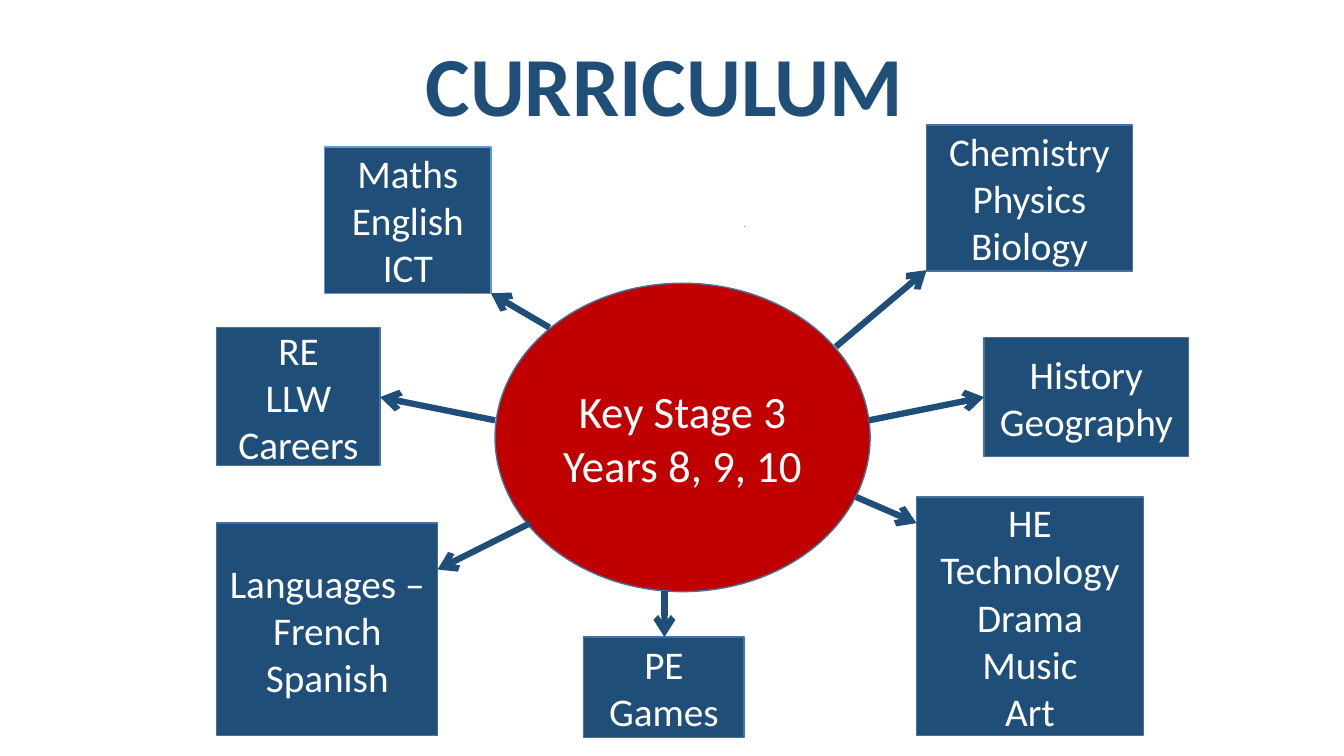
import pptx
import pptx.util
import pptx.dml.color
import pptx.enum.shapes
import pptx.enum.text
import pptx.oxml.ns
import lxml.etree

Inches = pptx.util.Inches
Pt = pptx.util.Pt
SHAPE = pptx.enum.shapes.MSO_SHAPE
NAVY, RED, WHITE = "1F4E79", "C00000", "FFFFFF"
EDGE, SKY = "43739E", "5B9BD5"


def color(code):
    return pptx.dml.color.RGBColor.from_string(code)


class Chart:
    """Style and current slide of the curriculum map."""

    font = "Calibri"

    def __init__(self, slide):
        self.slide = slide

    def label(self, frame, lines, size, ink, bold=False, space=None):
        frame.word_wrap = True
        frame.vertical_anchor = pptx.enum.text.MSO_ANCHOR.MIDDLE
        for i, line in enumerate(lines):
            para = frame.add_paragraph() if i else frame.paragraphs[0]
            para.alignment = pptx.enum.text.PP_ALIGN.CENTER
            if space:
                para.line_spacing = space
            run = para.add_run()
            run.text = line
            run.font.name = self.font
            run.font.size = Pt(size)
            run.font.bold = bold
            run.font.color.rgb = color(ink)

    def title(self, text, spot):
        head = self.slide.shapes.title
        head.left, head.top, head.width, head.height = map(Inches, spot)
        self.label(head.text_frame, [text], 60, NAVY, True, 0.9)

    def node(self, kind, spot, lines, fill=NAVY, edge=EDGE, size=28):
        node = self.slide.shapes.add_shape(kind, *map(Inches, spot))
        node.shadow.inherit = False
        node.fill.solid()
        node.fill.fore_color.rgb = color(fill)
        node.line.color.rgb = color(edge)
        node.line.width = Pt(1)
        self.label(node.text_frame, lines, size, WHITE)

    def link(self, ends, ink=NAVY, width=4.5, arrow=True):
        link = self.slide.shapes.add_connector(
            pptx.enum.shapes.MSO_CONNECTOR.STRAIGHT, *map(Inches, ends))
        link.line.color.rgb = color(ink)
        link.line.width = Pt(width)
        qn = pptx.oxml.ns.qn
        props = link._element.spPr
        if arrow:
            tip = lxml.etree.SubElement(props.find(qn("a:ln")), qn("a:headEnd"))
            tip.set("type", "arrow")
        lxml.etree.SubElement(props, qn("a:effectLst"))


# Subject boxes: place, lines, edge
BOXES = [
    ((3.22, 1.46, 1.65, 1.45), ["Maths", "English", "ICT"], SKY),
    ((9.76, 3.35, 2.03, 1.18), ["History", "Geography"], EDGE),
    ((2.15, 5.19, 2.19, 2.11), ["Languages –", "French", "Spanish"], EDGE),
    ((2.15, 3.25, 1.62, 1.37), ["RE", "LLW", "Careers"], EDGE),
    ((5.79, 6.32, 1.59, 1), ["PE", "Games"], EDGE),
    ((9.09, 4.93, 2.25, 2.37),
     ["HE", "Technology", "Drama", "Music", "Art"], EDGE),
    ((9.19, 1.24, 2.04, 1.45), ["Chemistry", "Physics", "Biology"], EDGE),
]

# Arrows, each from its box to the hub
LINKS = [
    (4.87, 2.91, 5.45, 3.25),
    (3.77, 3.94, 4.91, 4.17),
    (4.34, 5.65, 5.26, 5.19),
    (6.59, 6.32, 6.59, 5.86),
    (9.09, 5.19, 8.49, 4.93),
    (9.76, 3.94, 8.62, 4.17),
    (9.19, 2.68, 8.29, 3.44),
]


def main():
    deck = pptx.Presentation()
    deck.slide_width, deck.slide_height = Inches(13.33), Inches(7.5)
    chart = Chart(deck.slides.add_slide(deck.slide_layouts[5]))

    # Title and hub
    chart.title("CURRICULUM", (0.84, 0.16, 11.5, 1.45))
    chart.node(SHAPE.OVAL, (4.91, 2.81, 3.72, 3.06),
               ["Key Stage 3", "Years 8, 9, 10"], RED, size=32)

    # Subjects
    for spot, lines, edge in BOXES:
        chart.node(SHAPE.RECTANGLE, spot, lines, edge=edge)

    # Small tick above the hub, then the arrows
    chart.link((7.38, 2.24, 7.38, 2.25), SKY, 0.5, arrow=False)
    for ends in LINKS:
        chart.link(ends)

    deck.save("out.pptx")


if __name__ == "__main__":
    main()
